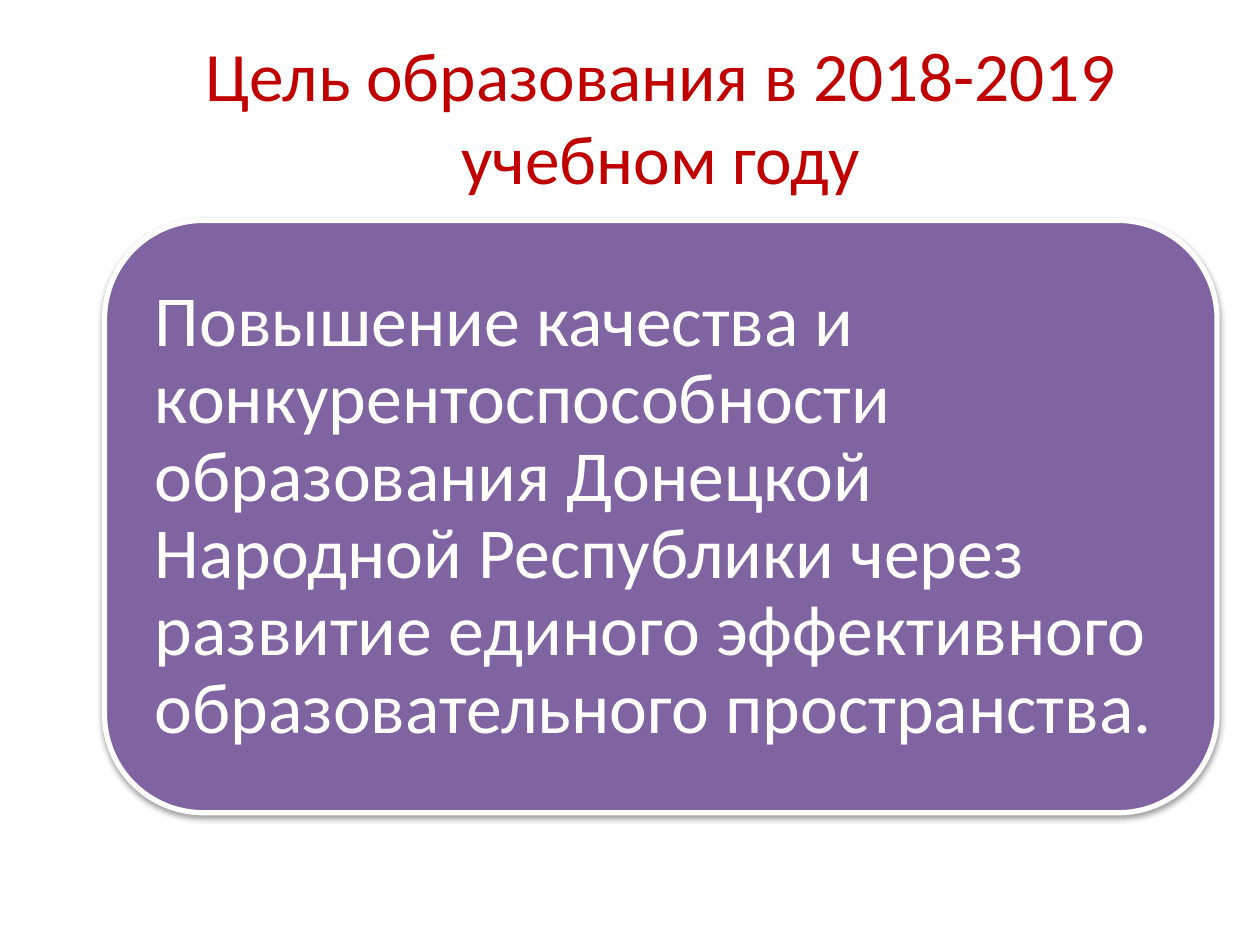
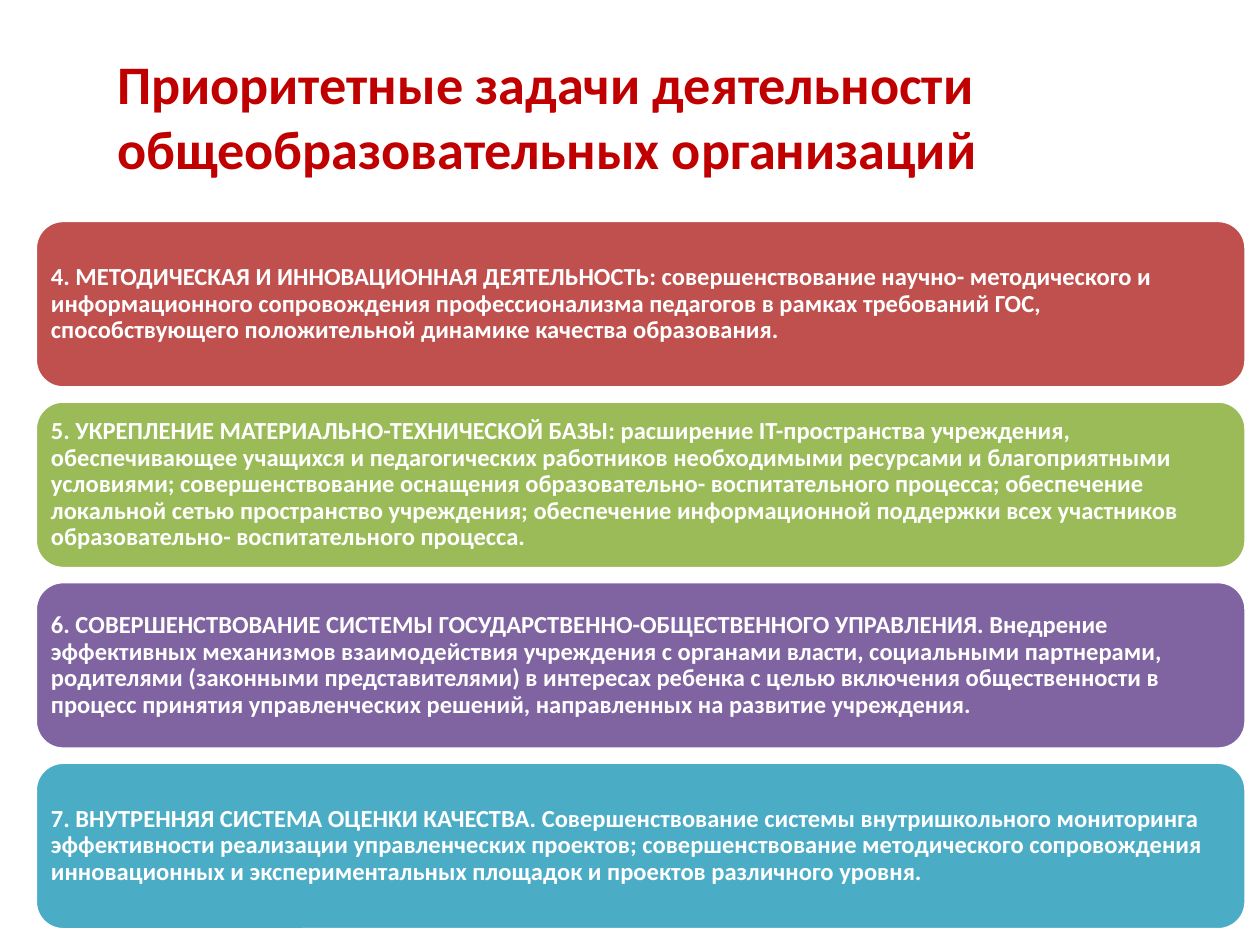
from dataclasses import dataclass

from lxml.etree import SubElement
from pptx import Presentation
from pptx.dml.color import RGBColor as RGB
from pptx.enum.shapes import MSO_SHAPE as Shape
from pptx.enum.text import MSO_ANCHOR as Anchor, MSO_AUTO_SIZE as AutoSize, PP_ALIGN as Align
from pptx.oxml.ns import qn
from pptx.util import Emu, Inches, Pt

FONT = "Calibri"
COLORS = {
    "title": "C00000",
    "white": "FFFFFF",
    "black": "000000",
    "red": "C0504D",
    "green": "9BBB59",
    "purple": "8064A2",
    "aqua": "4BACC6",
}
WIDTH, HEIGHT = Inches(10), Inches(7.5)
CARDS_TOP = 23.33
TASK_HEIGHT, TASK_STEP = 17.73, 19.11


@dataclass(frozen=True)
class Area:
    """Place on the slide, in per cent of its width and height."""

    left: float
    top: float
    width: float
    height: float

    def emu(self) -> tuple[Emu, Emu, Emu, Emu]:
        """Return left, top, width and height as lengths."""
        return (
            Emu(round(WIDTH * self.left / 100)),
            Emu(round(HEIGHT * self.top / 100)),
            Emu(round(WIDTH * self.width / 100)),
            Emu(round(HEIGHT * self.height / 100)),
        )


@dataclass(frozen=True)
class TextStyle:
    """Size, colour, weight and alignment of a text."""

    size: float
    color: str
    bold: bool = False
    align: Align = Align.LEFT


@dataclass(frozen=True)
class CardStyle:
    """Text style, inner margin, outline and shadow of a card."""

    text: TextStyle
    inset: float
    outline: float
    shadow: bool = False


@dataclass(frozen=True)
class Card:
    """Rounded card with its fill and wording."""

    area: Area
    fill: str
    text: str


TITLE_AREA = Area(8.3, 3.87, 88.3, 16.67)
GOAL_STYLE = CardStyle(TextStyle(41, "white"), 0.17, 3, shadow=True)
TASK_STYLE = CardStyle(TextStyle(14, "white", bold=True), 0.06, 2)

GOAL = (
    "Повышение качества и конкурентоспособности образования Донецкой Народной Республики "
    "через развитие единого эффективного образовательного пространства."
)
TASKS = [
    ("red",
     "4. МЕТОДИЧЕСКАЯ И ИННОВАЦИОННАЯ ДЕЯТЕЛЬНОСТЬ: совершенствование научно- методического и "
     "информационного сопровождения профессионализма педагогов в рамках требований ГОС, "
     "способствующего положительной динамике качества образования."),
    ("green",
     "5. УКРЕПЛЕНИЕ МАТЕРИАЛЬНО-ТЕХНИЧЕСКОЙ БАЗЫ: расширение IT-пространства учреждения, "
     "обеспечивающее учащихся и педагогических работников необходимыми ресурсами и благоприятными "
     "условиями; совершенствование оснащения образовательно- воспитательного процесса; обеспечение "
     "локальной сетью пространство учреждения; обеспечение информационной поддержки всех участников "
     "образовательно- воспитательного процесса."),
    ("purple",
     "6. СОВЕРШЕНСТВОВАНИЕ СИСТЕМЫ ГОСУДАРСТВЕННО-ОБЩЕСТВЕННОГО УПРАВЛЕНИЯ. Внедрение "
     "эффективных механизмов взаимодействия учреждения с органами власти, социальными партнерами, "
     "родителями (законными представителями) в интересах ребенка с целью включения общественности в "
     "процесс принятия управленческих решений, направленных на развитие учреждения."),
    ("aqua",
     "7. ВНУТРЕННЯЯ СИСТЕМА ОЦЕНКИ КАЧЕСТВА. Совершенствование системы внутришкольного мониторинга "
     "эффективности реализации управленческих проектов; совершенствование методического сопровождения "
     "инновационных и экспериментальных площадок и проектов различного уровня."),
]


def rgb(name: str) -> RGB:
    """Look up a palette colour."""
    return RGB.from_string(COLORS[name])


def write(tf, text: str, style: TextStyle, spacing: float = 1.0) -> None:
    """Write one paragraph, centred vertically in its frame."""
    tf.word_wrap = True
    tf.auto_size = AutoSize.NONE
    tf.vertical_anchor = Anchor.MIDDLE
    p = tf.paragraphs[0]
    p.alignment = style.align
    p.line_spacing = spacing
    r = p.add_run()
    r.text = text
    r.font.name = FONT
    r.font.size = Pt(style.size)
    r.font.bold = style.bold
    r.font.color.rgb = rgb(style.color)


def add_shadow(sp) -> None:
    """Give a shape a soft shadow straight below it."""
    effects = sp._element.spPr.find(qn("a:effectLst"))
    shadow = SubElement(effects, qn("a:outerShdw"), blurRad=str(Pt(3.1)), dist=str(Pt(1.6)),
                        dir="5400000", rotWithShape="0")
    color = SubElement(shadow, qn("a:srgbClr"), val=COLORS["black"])
    SubElement(color, qn("a:alpha"), val="38000")


def add_card(s, card: Card, style: CardStyle) -> None:
    """Draw a rounded card with its text."""
    sp = s.shapes.add_shape(Shape.ROUNDED_RECTANGLE, *card.area.emu())
    sp.shadow.inherit = False
    sp.fill.solid()
    sp.fill.fore_color.rgb = rgb(card.fill)
    sp.line.color.rgb = rgb("white")
    sp.line.width = Pt(style.outline)
    if style.shadow:
        add_shadow(sp)
    tf = sp.text_frame
    tf.margin_left = tf.margin_right = tf.margin_top = tf.margin_bottom = Inches(style.inset)
    write(tf, card.text, style.text, 0.9)


def add_slide(prs, title: str, title_style: TextStyle, cards: list[Card], style: CardStyle) -> None:
    """Add a slide with a title and cards under it."""
    s = prs.slides.add_slide(prs.slide_layouts[5])
    sp = s.shapes.title
    sp.left, sp.top, sp.width, sp.height = TITLE_AREA.emu()
    write(sp.text_frame, title, title_style)
    for card in cards:
        add_card(s, card, style)


def main() -> None:
    """Build and save the presentation."""
    prs = Presentation()
    prs.slide_width, prs.slide_height = WIDTH, HEIGHT
    goal = Card(Area(TITLE_AREA.left, CARDS_TOP, TITLE_AREA.width, 62.67), "purple", GOAL)
    add_slide(prs, "Цель образования в 2018-2019 учебном году",
              TextStyle(39.6, "title", align=Align.CENTER), [goal], GOAL_STYLE)
    tasks = [Card(Area(2.8, CARDS_TOP + i * TASK_STEP, 96.1, TASK_HEIGHT), fill, text)
             for i, (fill, text) in enumerate(TASKS)]
    add_slide(prs, "Приоритетные задачи деятельности общеобразовательных организаций",
              TextStyle(31, "title", bold=True), tasks, TASK_STYLE)
    prs.save("out.pptx")


if __name__ == "__main__":
    main()
